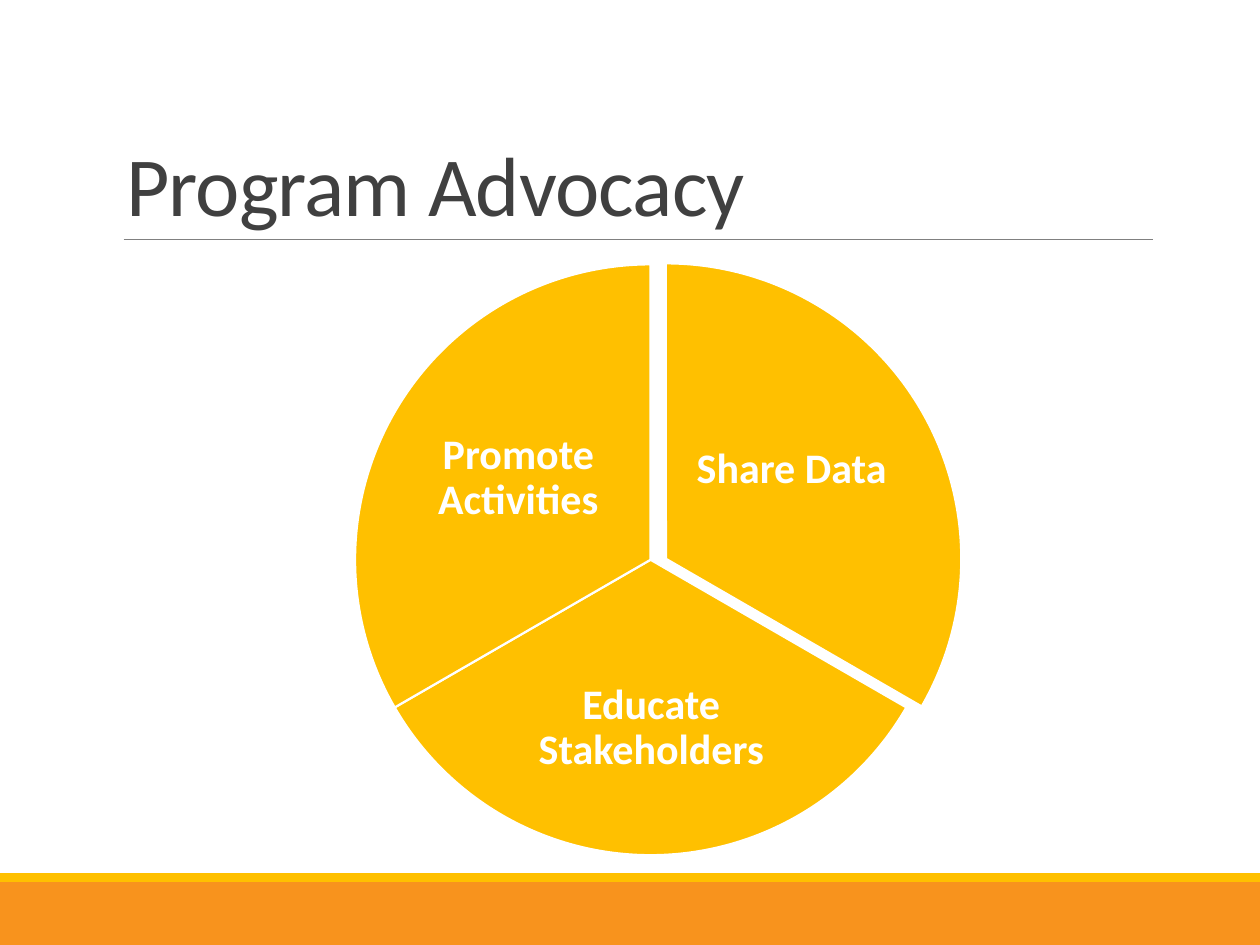
from lxml.etree import SubElement
from pptx import Presentation
from pptx.dml.color import RGBColor
from pptx.enum.shapes import MSO_CONNECTOR, MSO_SHAPE
from pptx.enum.text import MSO_ANCHOR, MSO_AUTO_SIZE, PP_ALIGN
from pptx.oxml.ns import qn
from pptx.util import Cm, Pt

WHITE, GOLD, ORANGE = "FFFFFF", "FFC000", "F8931D"
GREY, DARK = "808080", "404040"
SIZE = 11.91  # pie diameter in cm

# label, pie corner, start angle, label box
PARTS = [
    ("Share Data", (7.47, 5.31), 270, (13.94, 7.49, 4.04, 3.96)),
    ("Educate Stakeholders", (7.16, 5.33), 30, (10.44, 12.85, 5.38, 3.68)),
    ("Promote Activities", (7.16, 5.33), 150, (8.43, 7.67, 4.04, 3.96)),
]


def color(code):
    return RGBColor.from_string(code)


def shape(slide, kind, box, fill, edge=None):
    item = slide.shapes.add_shape(kind, *map(Cm, box))
    item.shadow.inherit = False
    item.fill.solid()
    item.fill.fore_color.rgb = color(fill)
    if edge:
        item.line.color.rgb = color(edge)
        item.line.width = Pt(1.25)
    else:
        item.line.fill.background()
    return item


def rule(slide, left, right, top):
    line = slide.shapes.add_connector(
        MSO_CONNECTOR.STRAIGHT, Cm(left), Cm(top), Cm(right), Cm(top))
    line.line.color.rgb = color(GREY)
    line.line.width = Pt(0.5)
    SubElement(line._element.spPr, qn("a:effectLst"))


def write(para, text, size, code, bold=False):
    run = para.add_run()
    run.text = text
    font = run.font
    font.name, font.size, font.bold = "Calibri", Pt(size), bold
    font.color.rgb = color(code)
    return run


def title(slide, text, box):
    item = slide.shapes.title
    item.left, item.top, item.width, item.height = map(Cm, box)
    frame = item.text_frame
    frame.auto_size = MSO_AUTO_SIZE.NONE
    frame.vertical_anchor = MSO_ANCHOR.BOTTOM
    para = frame.paragraphs[0]
    para.alignment = PP_ALIGN.LEFT
    para.line_spacing = 0.85
    run = write(para, text, 48, DARK)
    run._r.get_or_add_rPr().set("spc", "-50")  # tighter letters


def wedge(slide, corner, start):
    item = shape(slide, MSO_SHAPE.PIE, (*corner, SIZE, SIZE), GOLD, WHITE)
    # One degree is 0.6 adjustment units; each part spans a third
    item.adjustments[0] = start * 0.6
    item.adjustments[1] = (start + 120) % 360 * 0.6


def label(slide, text, box):
    frame = slide.shapes.add_textbox(*map(Cm, box)).text_frame
    frame.word_wrap = True
    frame.vertical_anchor = MSO_ANCHOR.MIDDLE
    frame.margin_left = frame.margin_right = Cm(0.08)
    frame.margin_top = frame.margin_bottom = Cm(0.08)
    para = frame.paragraphs[0]
    para.alignment = PP_ALIGN.CENTER
    para.line_spacing = 0.9
    write(para, text, 24, WHITE, bold=True)


def main():
    deck = Presentation()
    deck.slide_width, deck.slide_height = Cm(25.4), Cm(19.05)
    slide = deck.slides.add_slide(deck.slide_layouts[5])

    # Footer bands and title rule
    shape(slide, MSO_SHAPE.RECTANGLE, (0, 17.78, 25.4, 1.27), ORANGE)
    shape(slide, MSO_SHAPE.RECTANGLE, (0, 17.6, 25.4, 0.18), GOLD)
    rule(slide, 2.49, 23.24, 4.83)
    title(slide, "Program Advocacy", (2.29, 0.79, 20.96, 4.04))

    # Pie parts with their labels
    for text, corner, start, box in PARTS:
        wedge(slide, corner, start)
        label(slide, text, box)

    deck.save("out.pptx")


if __name__ == "__main__":
    main()
